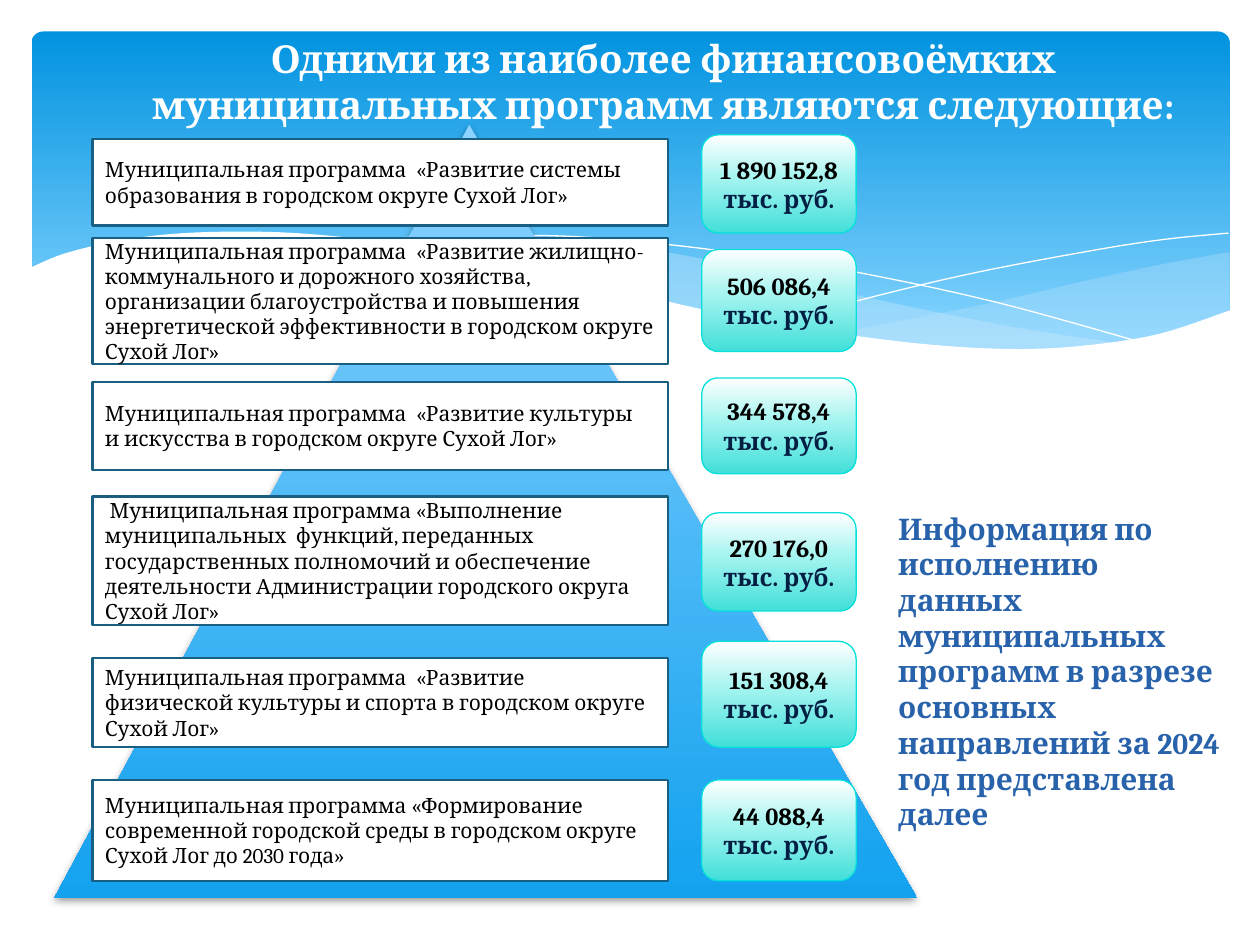
from lxml.etree import SubElement
from pptx import Presentation
from pptx.dml.color import RGBColor
from pptx.enum.shapes import MSO_SHAPE
from pptx.enum.text import MSO_ANCHOR, PP_ALIGN
from pptx.oxml.ns import qn
from pptx.util import Inches, Pt

COLUMNS, ROWS = 100, 75  # grid of square cells over a 10 x 7.5 inch slide

PROGRAMS = [  # text, card top and height, amount, amount top and height
    ("Муниципальная программа  «Развитие системы образования в городском округе Сухой Лог»",
     11, 6.9, "1 890 152,8", 10.7, 7.8),
    ("Муниципальная программа  «Развитие жилищно-коммунального и дорожного хозяйства, "
     "организации благоустройства и повышения энергетической эффективности в городском "
     "округе Сухой Лог»", 18.9, 10, "506 086,4", 19.8, 8.1),
    ("Муниципальная программа  «Развитие культуры  и искусства в городском округе Сухой Лог»",
     30.3, 7, "344 578,4", 30, 7.6),
    (" Муниципальная программа «Выполнение муниципальных  функций, переданных государственных "
     "полномочий и обеспечение деятельности Администрации городского округа  Сухой Лог»",
     39.4, 10.2, "270 176,0", 40.7, 7.8),
    ("Муниципальная программа  «Развитие физической культуры и спорта в городском округе "
     "Сухой Лог»", 52.2, 7.1, "151 308,4", 50.9, 8.4),
    ("Муниципальная программа «Формирование современной городской среды в городском округе "
     "Сухой Лог до 2030 года»", 61.9, 8, "44 088,4", 61.9, 8),
]

# Wave edges, as grid points
RIGHT_WAVE = [
    [(97.6, 20), (92.1, 21), (86.1, 22.3), (77.9, 24.2), (66.1, 26.5)],
    [(66.1, 26.5), (71.9, 27.2), (76.9, 27.7), (82.4, 27.7), (87.2, 27.4),
     (92.1, 26.5), (97.6, 24.7)],
]
MIDDLE_WAVE = [
    [(89.3, 27.3), (80.7, 26), (70.6, 24), (62.9, 22.2), (55.5, 20.5), (48.9, 19.4),
     (42, 18.7), (36.1, 18.5), (28.6, 19.1)],
    [(28.6, 19.1), (36.2, 20.3), (44.9, 22.2), (56.6, 24.8), (66.5, 26.6), (74.8, 27.6),
     (81.8, 27.8), (89.3, 27.3)],
]
FALLING_LINE = [(30.9, 19.5), (36.3, 18.9), (43.3, 18.7), (51, 19.2), (60.8, 20.4),
                (69.5, 21.9), (79.5, 24.1), (90.7, 27.2)]
RISING_LINE = [(61.3, 25.7), (69.5, 23.5), (77.6, 21.6), (86.6, 19.9), (92.4, 19),
               (97.5, 18.5)]
WHITE_WAVE = [
    [(97.7, 24.6), (92, 26.5), (86.3, 27.4), (80.9, 27.7), (74.4, 27.4), (66.8, 26.5),
     (57.9, 25), (50.3, 23.3), (41.8, 21.3), (34, 19.7), (27.1, 18.8), (21.1, 18.4),
     (14.6, 18.5), (9.5, 19.1), (5.2, 20.1), (2.3, 21.3)],
    [(2.3, 32.9), (97.7, 32.9)],
]


def color(hex_string):
    return RGBColor.from_string(hex_string)


def smooth(points, steps=6):
    """Points of a Catmull-Rom curve that runs through the given points."""
    if len(points) < 3:
        return points
    padded = [points[0], *points, points[-1]]
    curve = []
    for a, b, c, d in zip(padded, padded[1:], padded[2:], padded[3:]):
        for t in (step / steps for step in range(steps)):
            curve.append(tuple(
                0.5 * (2 * q + (r - p) * t + (2 * p - 5 * q + 4 * r - s) * t ** 2
                       + (3 * q - p - 3 * r + s) * t ** 3)
                for p, q, r, s in zip(a, b, c, d)))
    return curve + [points[-1]]


class SlideBuilder:
    font = "Cambria"

    def __init__(self, presentation):
        self.column = presentation.slide_width / COLUMNS
        self.row = presentation.slide_height / ROWS
        self.slide = presentation.slides.add_slide(presentation.slide_layouts[5])

    def box(self, left, top, width, height):
        return [round(length * unit) for length, unit in zip(
            (left, top, width, height), (self.column, self.row) * 2)]

    def paint(self, shape, fill=None, line=None, line_width=1.0, opacity=100):
        """Fill is a hex string, or a list of (percent, hex) stops from top to bottom."""
        shape.shadow.inherit = False
        if fill is None:
            shape.fill.background()
        elif isinstance(fill, str):
            shape.fill.solid()
            shape.fill.fore_color.rgb = color(fill)
            if opacity < 100:
                rgb = shape._element.spPr.find(".//" + qn("a:srgbClr"))
                SubElement(rgb, qn("a:alpha"), val=str(opacity * 1000))
        else:
            shape.fill.gradient()
            shape.fill.gradient_angle = 270
            stops = shape._element.spPr.find(".//" + qn("a:gsLst"))
            for stop in list(stops):
                stops.remove(stop)
            for percent, value in fill:
                stop = SubElement(stops, qn("a:gs"), pos=str(percent * 1000))
                SubElement(stop, qn("a:srgbClr"), val=value)
        if line is None:
            shape.line.fill.background()
        else:
            shape.line.color.rgb = color(line)
            shape.line.width = Pt(line_width)

    def shape(self, kind, place, **paint):
        shape = self.slide.shapes.add_shape(kind, *self.box(*place))
        self.paint(shape, **paint)
        return shape

    def wave(self, edges, closed=True, **paint):
        points = [(x * self.column, y * self.row) for edge in edges for x, y in smooth(edge)]
        builder = self.slide.shapes.build_freeform(*points[0])
        builder.add_line_segments(points[1:], close=closed)
        self.paint(builder.convert_to_shape(), **paint)

    def shade(self, shape):
        effects = shape._element.spPr.find(qn("a:effectLst"))
        shadow = SubElement(effects, qn("a:outerShdw"), blurRad=str(Pt(4)), dist=str(Pt(2)),
                            dir="5400000", rotWithShape="0")
        rgb = SubElement(shadow, qn("a:srgbClr"), val="000000")
        SubElement(rgb, qn("a:alpha"), val="38000")

    def set_text(self, shape, text, size, colors, bold=False, align=PP_ALIGN.LEFT,
                 anchor=MSO_ANCHOR.MIDDLE):
        """One colour for each paragraph of the text."""
        frame = shape.text_frame
        frame.text = text
        frame.word_wrap = True
        frame.vertical_anchor = anchor
        for paragraph, value in zip(frame.paragraphs, colors):
            paragraph.alignment = align
            for run in paragraph.runs:
                run.font.name = self.font
                run.font.size = Pt(size)
                run.font.bold = bold
                run.font.color.rgb = color(value)

    def title(self, place, text):
        title = self.slide.shapes.title
        title.left, title.top, title.width, title.height = self.box(*place)
        self.set_text(title, text, 22, ["FFFFFF"], bold=True, align=PP_ALIGN.CENTER)
        title.text_frame.margin_left, title.text_frame.margin_right = Inches(0.4), 0
        self.slide.shapes._spTree.append(title._element)  # bring to front

    def program(self, text, top, height):
        card = self.shape(MSO_SHAPE.RECTANGLE, (7.35, top, 45.7, height),
                          fill="FFFFFF", line="195F84", line_width=1.25)
        self.set_text(card, text, 12, ["000000"])

    def amount(self, value, top, height):
        badge = self.shape(MSO_SHAPE.ROUNDED_RECTANGLE, (55.7, top, 12.25, height),
                           fill=[(0, "FFFFFF"), (44, "A5F4F0"), (100, "42DFD9")],
                           line="05E0DB", line_width=0.75)
        self.set_text(badge, value + "\nтыс. руб.", 14, ["000000", "041F44"], bold=True,
                      align=PP_ALIGN.CENTER)

    def remark(self, place, text, text_top):
        remark = self.shape(MSO_SHAPE.RECTANGLE, place, fill="FFFFFF")
        self.set_text(remark, text, 17, ["2862AA"], bold=True, anchor=MSO_ANCHOR.TOP)
        remark.text_frame.margin_top = round(text_top * self.row)


def main():
    presentation = Presentation()
    presentation.slide_width, presentation.slide_height = Inches(10), Inches(7.5)
    builder = SlideBuilder(presentation)

    # Blue backdrop with waves
    backdrop = builder.shape(MSO_SHAPE.ROUNDED_RECTANGLE, (2.5, 2.5, 95.1, 27),
                             fill=[(0, "0293E0"), (90, "83D3FE")])
    backdrop.adjustments[0] = 0.034
    builder.wave(RIGHT_WAVE, fill="C6E7FC", opacity=29)
    builder.wave(MIDDLE_WAVE, fill="C6E7FC", opacity=40)
    for curve in (FALLING_LINE, RISING_LINE):
        builder.wave([curve], closed=False, line="FFFFFF", line_width=0)
    builder.wave(WHITE_WAVE, fill="FFFFFF")

    # Pyramid
    pyramid = builder.shape(MSO_SHAPE.ISOSCELES_TRIANGLE, (4.3, 9.9, 68.5, 61.4),
                            fill=[(0, "8CD3FF"), (100, "14A2EF")])
    pyramid.adjustments[0] = 0.481
    builder.shade(pyramid)

    # Title and remark
    builder.title((6.4, 2.1, 88.5, 8.7), "Одними из наиболее финансовоёмких\v"
                                         "муниципальных программ являются следующие:")
    builder.remark((70.3, 28.4, 27.6, 35.1),
                   "Информация по исполнению данных муниципальных программ в разрезе "
                   "основных направлений за 2024 год представлена далее", text_top=12.1)

    # Programs with their amounts
    for text, top, height, value, value_top, value_height in PROGRAMS:
        builder.program(text, top, height)
        builder.amount(value, value_top, value_height)

    presentation.save("out.pptx")


if __name__ == "__main__":
    main()
